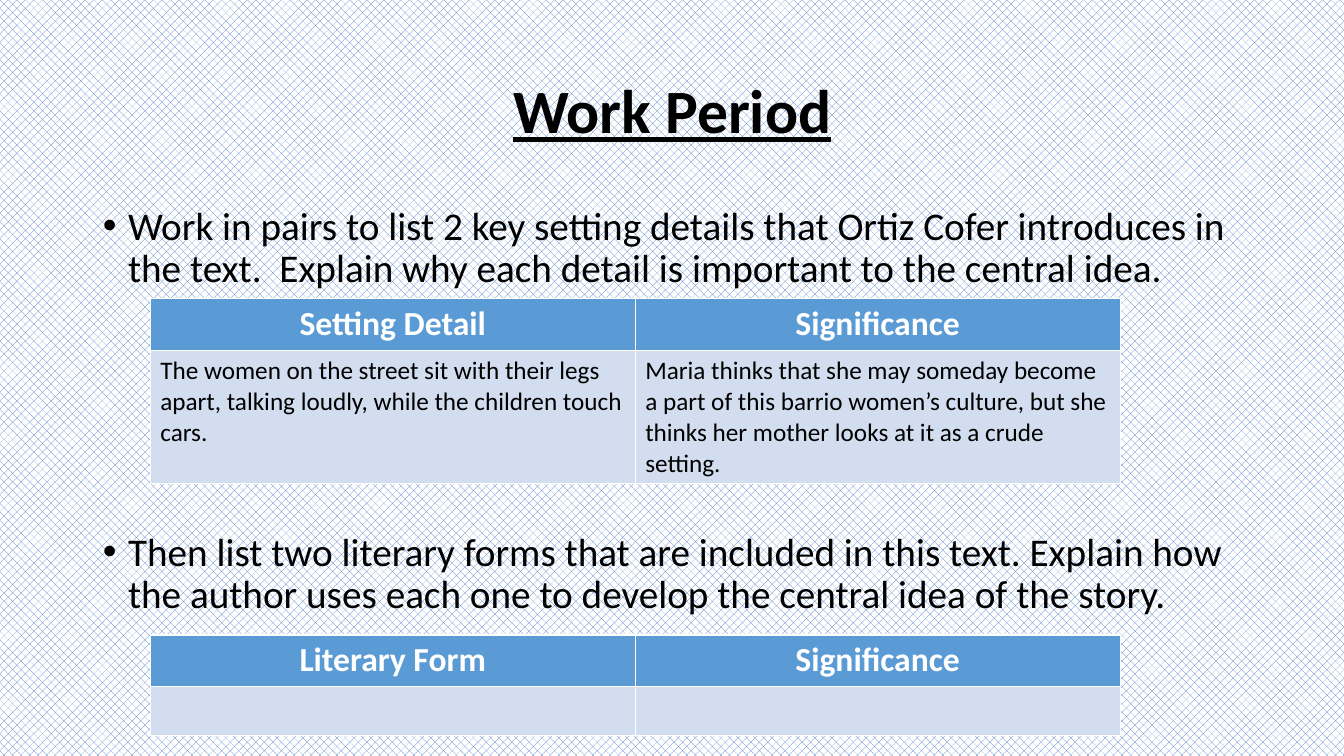
from dataclasses import dataclass

from pptx import Presentation
from pptx.dml.color import RGBColor as RGB
from pptx.enum.dml import MSO_PATTERN as Pattern
from pptx.enum.text import MSO_ANCHOR as Anchor, MSO_AUTO_SIZE as AutoSize, PP_ALIGN as Align
from pptx.util import Inches, Pt

# Content
HEADING = "Work Period"
TASKS = [
    "Work in pairs to list 2 key setting details that Ortiz Cofer introduces in the text.  "
    "Explain why each detail is important to the central idea.",
    "Then list two literary forms that are included in this text. "
    "Explain how the author uses each one to develop the central idea of the story.",
]
SETTING_ROWS = [
    ("Setting Detail", "Significance"),
    ("The women on the street sit with their legs apart, talking loudly, "
     "while the children touch cars.",
     "Maria thinks that she may someday become a part of this barrio women’s culture, "
     "but she thinks her mother looks at it as a crude setting."),
]
FORM_ROWS = [("Literary Form", "Significance"), ("", "")]


@dataclass(frozen=True)
class Theme:
    font: str = "Calibri"
    ink: RGB = RGB(0, 0, 0)
    paper: RGB = RGB(255, 255, 255)
    weave: RGB = RGB(0x44, 0x72, 0xC4)
    header: RGB = RGB(0x5B, 0x9B, 0xD5)
    band: RGB = RGB(0xD2, 0xDE, 0xEF)
    title_size: int = 44
    task_size: int = 28
    header_size: int = 24
    cell_size: int = 18


THEME = Theme()

# Layout, in inches
WIDTH, HEIGHT = 13.33, 7.5
MARGIN, TEXT_WIDTH = 0.92, 11.5
TABLE_LEFT, COLUMN = 1.49, 4.81
TASK_GAPS = (10, 172)  # points above each task, leaving room for the first table
TABLES = [  # top, row heights, rows
    (2.96, (0.52, 1.3), SETTING_ROWS),
    (6.3, (0.49, 0.49), FORM_ROWS),
]


def style(paragraph, size, color, bold=False):
    font = paragraph.font
    font.name, font.size, font.bold = THEME.font, Pt(size), bold
    font.color.rgb = color


def place(holder, top, height, anchor):
    holder.left, holder.top = Inches(MARGIN), Inches(top)
    holder.width, holder.height = Inches(TEXT_WIDTH), Inches(height)
    frame = holder.text_frame
    frame.auto_size, frame.vertical_anchor = AutoSize.NONE, anchor
    return frame


def add_answer_table(slide, top, heights, rows):
    columns = len(rows[0])
    table = slide.shapes.add_table(
        len(rows), columns, Inches(TABLE_LEFT), Inches(top),
        Inches(COLUMN * columns), Inches(sum(heights))).table
    for r, (height, texts) in enumerate(zip(heights, rows)):
        table.rows[r].height = Inches(height)
        for c, text in enumerate(texts):
            cell = table.cell(r, c)
            cell.text = text
            cell.fill.solid()
            cell.fill.fore_color.rgb = THEME.band if r else THEME.header
            paragraph = cell.text_frame.paragraphs[0]
            if r:
                style(paragraph, THEME.cell_size, THEME.ink)
            else:
                paragraph.alignment = Align.CENTER
                style(paragraph, THEME.header_size, THEME.paper, bold=True)


def main():
    deck = Presentation()
    deck.slide_width, deck.slide_height = Inches(WIDTH), Inches(HEIGHT)
    slide = deck.slides.add_slide(deck.slide_layouts[1])

    # Woven background
    backdrop = slide.background.fill
    backdrop.patterned()
    backdrop.pattern = Pattern.from_xml("pct40")
    backdrop.fore_color.rgb, backdrop.back_color.rgb = THEME.weave, THEME.paper

    # Title
    title = place(slide.shapes.title, 0.4, 1.45, Anchor.MIDDLE)
    title.text = HEADING
    heading = title.paragraphs[0]
    heading.alignment, heading.line_spacing = Align.CENTER, 0.9
    style(heading, THEME.title_size, THEME.ink, bold=True)
    heading.font.underline = True

    # Bulleted tasks
    body = place(slide.placeholders[1], 2, 4.76, Anchor.TOP)
    body.text = "\n".join(TASKS)
    for task, gap in zip(body.paragraphs, TASK_GAPS):
        task.line_spacing, task.space_before = 0.9, Pt(gap)
        style(task, THEME.task_size, THEME.ink)
        indent = task._p.get_or_add_pPr()
        indent.set("marL", str(Inches(0.25)))
        indent.set("indent", str(-Inches(0.25)))

    # Answer tables
    for top, heights, rows in TABLES:
        add_answer_table(slide, top, heights, rows)

    deck.save("out.pptx")


if __name__ == "__main__":
    main()
